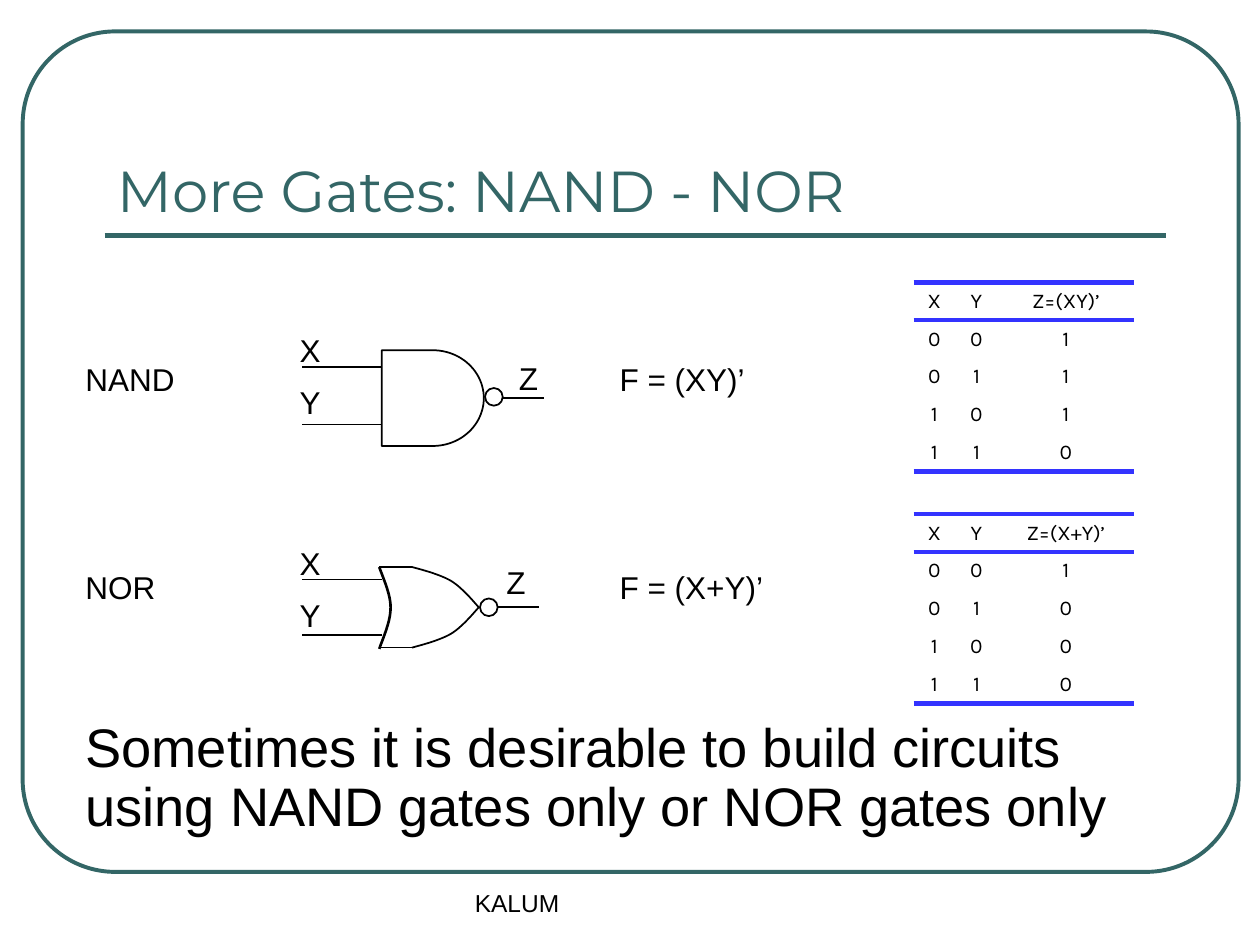
from dataclasses import dataclass, field

from lxml import etree
from pptx import Presentation
from pptx import util as u
from pptx.dml.color import RGBColor
from pptx.enum import shapes, text
from pptx.oxml.ns import qn

HUES = {"teal": "336666", "ink": "000000", "blue": "3333FF"}
COLS = (0.33, 0.34, 1.08)
ROW = 0.3
STEPS = 12

Point = tuple[float, float]


@dataclass
class Label:
    words: str
    left: float
    top: float
    width: float = 0.38
    height: float = 0.4
    face: dict = field(default_factory=dict)
    hue: str = "ink"
    frame: dict = field(default_factory=dict)
    para: dict = field(default_factory=dict)


@dataclass
class Wire:
    start: Point
    end: Point
    hue: str = "ink"
    weight: float = 1


@dataclass
class Block:
    kind: shapes.MSO_SHAPE
    left: float
    top: float
    width: float
    height: float
    hue: str = "ink"
    weight: float = 1
    bend: float | None = None


@dataclass
class Curve:
    points: list[Point]
    weight: float = 1


@dataclass
class Truth:
    top: float
    head: str
    outs: str


def shade(hue: str) -> RGBColor:
    return RGBColor.from_string(HUES[hue])


def apply(target, values: dict) -> None:
    for name, value in values.items():
        setattr(target, name, value)


def stroke(line, hue: str, weight: float) -> None:
    line.color.rgb = shade(hue)
    line.width = u.Pt(weight)


def style(para, hue: str, face: dict) -> None:
    apply(para.font, {"name": "Arial", "size": u.Pt(18)} | face)
    para.font.color.rgb = shade(hue)


def draw_label(slide, item: Label) -> None:
    box = slide.shapes.add_textbox(
        *map(u.Inches, (item.left, item.top, item.width, item.height)))
    apply(box.text_frame, item.frame)
    para = box.text_frame.paragraphs[0]
    para.text = item.words
    apply(para, item.para)
    style(para, item.hue, item.face)


def draw_wire(slide, item: Wire) -> None:
    wire = slide.shapes.add_connector(
        shapes.MSO_CONNECTOR.STRAIGHT, *map(u.Inches, item.start + item.end))
    stroke(wire.line, item.hue, item.weight)
    etree.SubElement(wire._element.spPr, qn("a:effectLst"))


def draw_block(slide, item: Block) -> None:
    block = slide.shapes.add_shape(
        item.kind, *map(u.Inches, (item.left, item.top, item.width, item.height)))
    if item.bend is not None:
        block.adjustments[0] = item.bend
    block.shadow.inherit = False
    block.fill.background()
    stroke(block.line, item.hue, item.weight)


def trace(a: Point, b: Point, c: Point, d: Point) -> list[Point]:
    dots = []
    for step in range(1, STEPS + 1):
        t = step / STEPS
        s = 1 - t
        dots.append(tuple(
            s**3 * p + 3 * s * s * t * q + 3 * s * t * t * r + t**3 * v
            for p, q, r, v in zip(a, b, c, d)))
    return dots


def draw_curve(slide, item: Curve) -> None:
    dots = [item.points[0]]
    for k in range(0, len(item.points) - 1, 3):
        dots += trace(*item.points[k:k + 4])
    (x, y), *rest = [tuple(map(u.Inches, dot)) for dot in dots]
    pen = slide.shapes.build_freeform(x, y)
    pen.add_line_segments(rest, close=False)
    curve = pen.convert_to_shape()
    curve.shadow.inherit = False
    curve.fill.background()
    stroke(curve.line, "ink", item.weight)


def edge(cell, sides: str) -> None:
    props = cell._tc.get_or_add_tcPr()
    for side in "LRTB":
        line = etree.SubElement(props, qn(f"a:ln{side}"))
        if side in sides:
            line.set("w", str(u.Pt(3)))
            fill = etree.SubElement(line, qn("a:solidFill"))
            etree.SubElement(fill, qn("a:srgbClr"), val=HUES["blue"])
        else:
            etree.SubElement(line, qn("a:noFill"))


def draw_truth(slide, item: Truth) -> None:
    rows = [("X", "Y", item.head)]
    rows += [(*f"{k:02b}", out) for k, out in enumerate(item.outs)]
    grid = slide.shapes.add_table(
        len(rows), len(COLS),
        *map(u.Inches, (7.25, item.top, sum(COLS), ROW * len(rows)))).table
    apply(grid, {"first_row": False, "horz_banding": False})
    for col, width in zip(grid.columns, COLS):
        col.width = u.Inches(width)
    marks = {0: "TB", 1: "T", len(rows) - 1: "B"}
    for r, row in enumerate(rows):
        for c, word in enumerate(row):
            cell = grid.cell(r, c)
            cell.text = word
            cell.vertical_anchor = text.MSO_ANCHOR.MIDDLE
            para = cell.text_frame.paragraphs[0]
            para.alignment = text.PP_ALIGN.CENTER
            style(para, "ink", {"name": "Karla", "size": u.Pt(12)})
            edge(cell, marks.get(r, ""))
            cell.fill.background()


FORMS = shapes.MSO_SHAPE
TIP = (3.8, 4.82)

PARTS = [
    Block(FORMS.ROUNDED_RECTANGLE, 0.18, 0.25, 9.65, 6.67, "teal", 2.25, 0.11),
    Wire((0.83, 1.87), (9.25, 1.87), "teal", 3),
    Label("More Gates: NAND - NOR", 0.83, 0.58, 8.41, 1.25,
          {"name": "Montserrat", "size": u.Pt(33)}, "teal",
          {"word_wrap": True, "vertical_anchor": text.MSO_ANCHOR.BOTTOM}),
    Label("Sometimes it is desirable to build circuits using NAND gates only "
          "or NOR gates only", 0.58, 5.67, 8.92, 1.08, {"size": u.Pt(31)},
          frame={"word_wrap": True},
          para={"line_spacing": 0.9, "space_before": u.Pt(7.8)}),
    Block(FORMS.FLOWCHART_DELAY, 3.03, 2.78, 0.81, 0.76),
    Block(FORMS.OVAL, 3.85, 3.08, 0.14, 0.14),
    Block(FORMS.OVAL, 3.81, 4.75, 0.14, 0.14),
    Wire((3.99, 3.16), (4.32, 3.16)),
    Wire((3.95, 4.82), (4.28, 4.82)),
    *(Wire((3.03, y), (2.4, y)) for y in (2.91, 3.37, 4.6, 5.04)),
    *(Wire((3.01, y), (3.27, y)) for y in (4.5, 5.14)),
    Curve([(3.01, 4.5), (3.05, 4.61), (3.1, 4.72), (3.1, 4.82),
           (3.1, 4.93), (3.05, 5.04), (3.01, 5.15)], 1.5),
    *(Curve([(3.27, 4.82 + s * 0.32), (3.38, 4.82 + s * 0.29),
             (3.49, 4.82 + s * 0.26), (3.58, 4.82 + s * 0.21),
             (3.66, 4.82 + s * 0.16), (3.73, 4.82 + s * 0.08), TIP])
      for s in (-1, 1)),
    *(Label(name, 2.28, top + drop)
      for top in (2.58, 4.27) for name, drop in (("X", 0), ("Y", 0.41))),
    Label("Z", 4.02, 2.8),
    Label("Z", 3.92, 4.42),
    *(Label(word, left, top, 1.74, 0.5)
      for top, pair in ((2.81, ("NAND", "F = (XY)’")),
                        (4.46, ("NOR", "F = (X+Y)’")))
      for left, word in zip((0.58, 4.82), pair)),
    Truth(4.08, "Z=(X+Y)’", "1000"),
    Truth(2.24, "Z=(XY)’", "1110"),
    Label("KALUM", 3.67, 7, 3.16, 0.5, {"size": u.Pt(14)},
          frame={"word_wrap": True}),
]

TOOLS = {Label: draw_label, Wire: draw_wire, Block: draw_block,
         Curve: draw_curve, Truth: draw_truth}


def main() -> None:
    deck = Presentation()
    apply(deck, {"slide_width": u.Inches(10), "slide_height": u.Inches(7.5)})
    slide = deck.slides.add_slide(deck.slide_layouts[6])
    for part in PARTS:
        TOOLS[type(part)](slide, part)
    deck.save("out.pptx")


if __name__ == "__main__":
    main()
